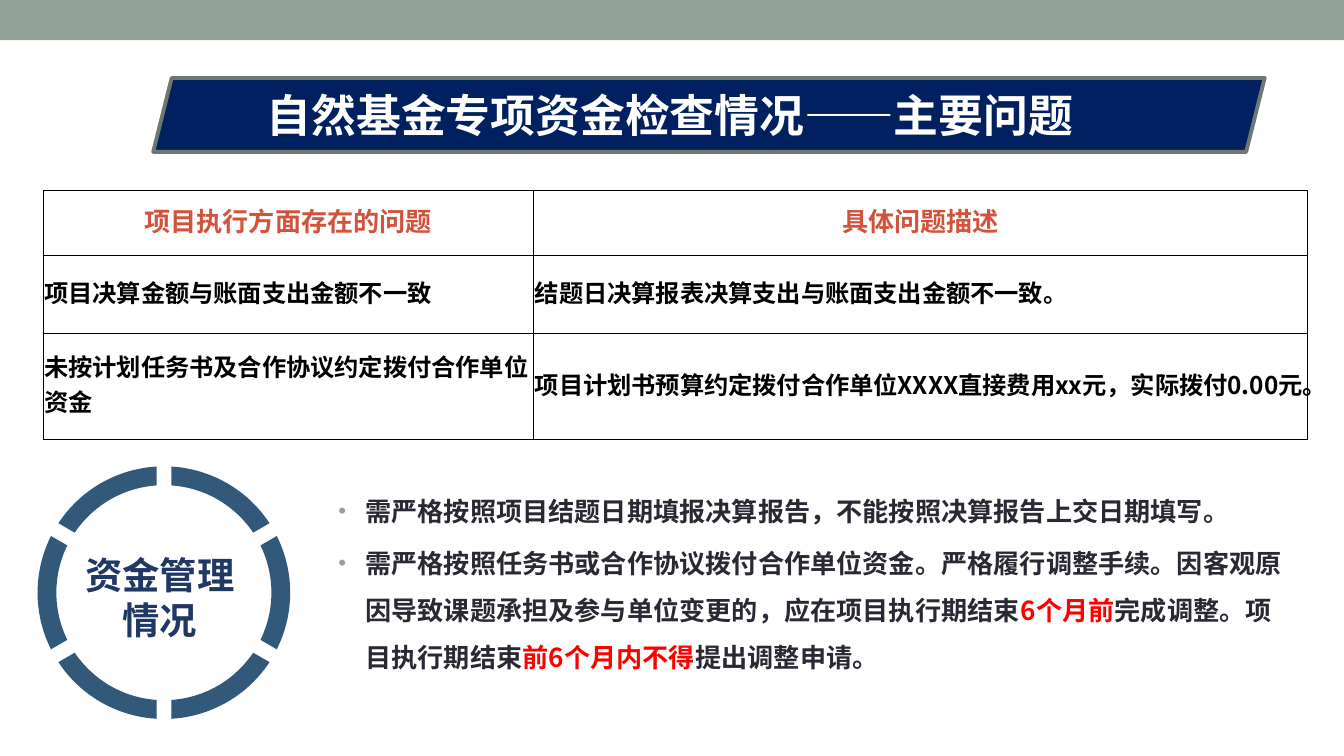
from math import asin, cos, pi, sin

from lxml.etree import SubElement
from pptx import Presentation
from pptx.dml.color import RGBColor
from pptx.enum.shapes import MSO_SHAPE
from pptx.enum.text import MSO_ANCHOR, PP_ALIGN
from pptx.oxml.ns import qn
from pptx.util import Inches, Pt

COLORS = {
    "sage": "93A299", "navy": "002060", "edge": "6D7871", "white": "FFFFFF",
    "label": "203864", "ring": "33597A", "header": "D2533C", "black": "000000",
    "body": "292934", "alert": "FF0000",
}
ROWS = [
    ("项目执行方面存在的问题", "具体问题描述"),
    ("项目决算金额与账面支出金额不一致", "结题日决算报表决算支出与账面支出金额不一致。"),
    ("未按计划任务书及合作协议约定拨付合作单位资金",
     "项目计划书预算约定拨付合作单位XXXX直接费用xx元，实际拨付0.00元。"),
]
ADVICE = [
    [("需严格按照项目结题日期填报决算报告，不能按照决算报告上交日期填写。", "body")],
    [("需严格按照任务书或合作协议拨付合作单位资金。严格履行调整手续。"
      "因客观原因导致课题承担及参与单位变更的，应在项目执行期结束", "body"),
     ("6个月前", "alert"),
     ("完成调整。项目执行期结束", "body"),
     ("前6个月内不得", "alert"),
     ("提出调整申请。", "body")],
]


def rgb(name):
    return RGBColor.from_string(COLORS[name])


class Deck:
    """Holds the style and the current slide, with a method per kind of element."""

    font = "Noto Sans CJK SC"

    def __init__(self, prs):
        self.s = prs.slides.add_slide(prs.slide_layouts[6])

    def run(self, p, text, size, color):
        r = p.add_run()
        r.text = text
        values = {"name": self.font, "size": Pt(size), "bold": True}
        for key, value in values.items():
            setattr(r.font, key, value)
        r.font.color.rgb = rgb(color)
        SubElement(r.font._element, qn("a:ea"), typeface=self.font)

    def paint(self, sp, fill=None, line=None, width=1):
        sp.shadow.inherit = False
        if fill:
            sp.fill.solid()
            sp.fill.fore_color.rgb = rgb(fill)
        else:
            sp.fill.background()
        if line:
            sp.line.color.rgb = rgb(line)
            sp.line.width = Pt(width)
        else:
            sp.line.fill.background()

    def shape(self, kind, box, fill=None, line=None, width=1):
        sp = self.s.shapes.add_shape(kind, *map(Inches, box))
        self.paint(sp, fill, line, width)
        return sp

    def label(self, sp, text, size, color, align):
        tf = sp.text_frame
        tf.word_wrap = True
        tf.vertical_anchor = MSO_ANCHOR.MIDDLE
        p = tf.paragraphs[0]
        p.alignment = align
        self.run(p, text, size, color)

    def ring(self, cx, cy, outer, inner, gap, count, color, steps=24):
        step = 2 * pi / count
        for i in range(count):
            points = []
            for radius, order in ((outer, 1), (inner, -1)):
                trim = asin(gap / 2 / radius)
                arc = [i * step + trim + (step - 2 * trim) * k / steps
                       for k in range(steps + 1)]
                points += [(Inches(cx + radius * sin(a)), Inches(cy - radius * cos(a)))
                           for a in arc[::order]]
            fb = self.s.shapes.build_freeform(*points[0])
            fb.add_line_segments(points[1:], close=True)
            self.paint(fb.convert_to_shape(), color)

    def border(self, cell):
        tc_pr = cell._tc.get_or_add_tcPr()
        for i, side in enumerate(("lnL", "lnR", "lnT", "lnB")):
            ln = tc_pr.makeelement(qn(f"a:{side}"), {"w": str(Pt(0.5))})
            fill = SubElement(ln, qn("a:solidFill"))
            SubElement(fill, qn("a:srgbClr"), val=COLORS["black"])
            tc_pr.insert(i, ln)

    def table(self, box, widths, heights, rows):
        frame = self.s.shapes.add_table(len(rows), len(widths), *map(Inches, box))
        table = frame.table
        for col, width in zip(table.columns, widths):
            col.width = Inches(width)
        values = {
            "margin_left": Inches(0.01), "margin_top": Inches(0.01),
            "margin_right": Inches(0.01), "margin_bottom": Inches(0.05),
            "vertical_anchor": MSO_ANCHOR.MIDDLE,
        }
        for i, (height, texts) in enumerate(zip(heights, rows)):
            table.rows[i].height = Inches(height)
            size, color, align = ((13, "black", PP_ALIGN.LEFT) if i
                                  else (14, "header", PP_ALIGN.CENTER))
            for j, text in enumerate(texts):
                cell = table.cell(i, j)
                for key, value in values.items():
                    setattr(cell, key, value)
                cell.fill.background()
                self.border(cell)
                p = cell.text_frame.paragraphs[0]
                p.alignment = align
                self.run(p, text, size, color)

    def bullets(self, box, items, size):
        tf = self.s.shapes.add_textbox(*map(Inches, box)).text_frame
        tf.word_wrap = True
        for i, runs in enumerate(items):
            p = tf.add_paragraph() if i else tf.paragraphs[0]
            p.line_spacing = 1.5
            if i:
                p.space_before = Pt(0.2 * size)
            p_pr = p._p.get_or_add_pPr()
            p_pr.set("marL", str(Inches(0.2)))
            p_pr.set("indent", str(-Inches(0.2)))
            color = SubElement(p_pr, qn("a:buClr"))
            SubElement(color, qn("a:srgbClr"), val=COLORS["sage"])
            SubElement(p_pr, qn("a:buSzPct"), val="85000")
            SubElement(p_pr, qn("a:buFont"), typeface="Arial")
            SubElement(p_pr, qn("a:buChar"), char="•")
            for text, name in runs:
                self.run(p, text, size, name)


def main():
    prs = Presentation()
    prs.slide_width = Inches(10)
    prs.slide_height = prs.slide_width * 9 // 16
    deck = Deck(prs)
    deck.shape(MSO_SHAPE.RECTANGLE, (0, 0, 10, 0.3), "sage")
    title = deck.shape(MSO_SHAPE.PARALLELOGRAM, (1.14, 0.58, 8.27, 0.55),
                       "navy", "edge", 2.08)
    deck.label(title, "自然基金专项资金检查情况——主要问题", 24, "white", PP_ALIGN.LEFT)
    topic = deck.shape(MSO_SHAPE.ROUNDED_RECTANGLE, (0.46, 4.04, 1.46, 0.81))
    deck.label(topic, "资金管理情况", 20, "label", PP_ALIGN.CENTER)
    deck.ring(1.22, 4.41, 0.94, 0.8, 0.11, 6, "ring")
    deck.table((0.32, 1.42, 9.41, 1.85), (3.65, 5.76), (0.48, 0.58, 0.79), ROWS)
    deck.bullets((2.42, 3.52, 7.31, 1.4), ADVICE, 14)
    prs.save("out.pptx")


if __name__ == "__main__":
    main()
